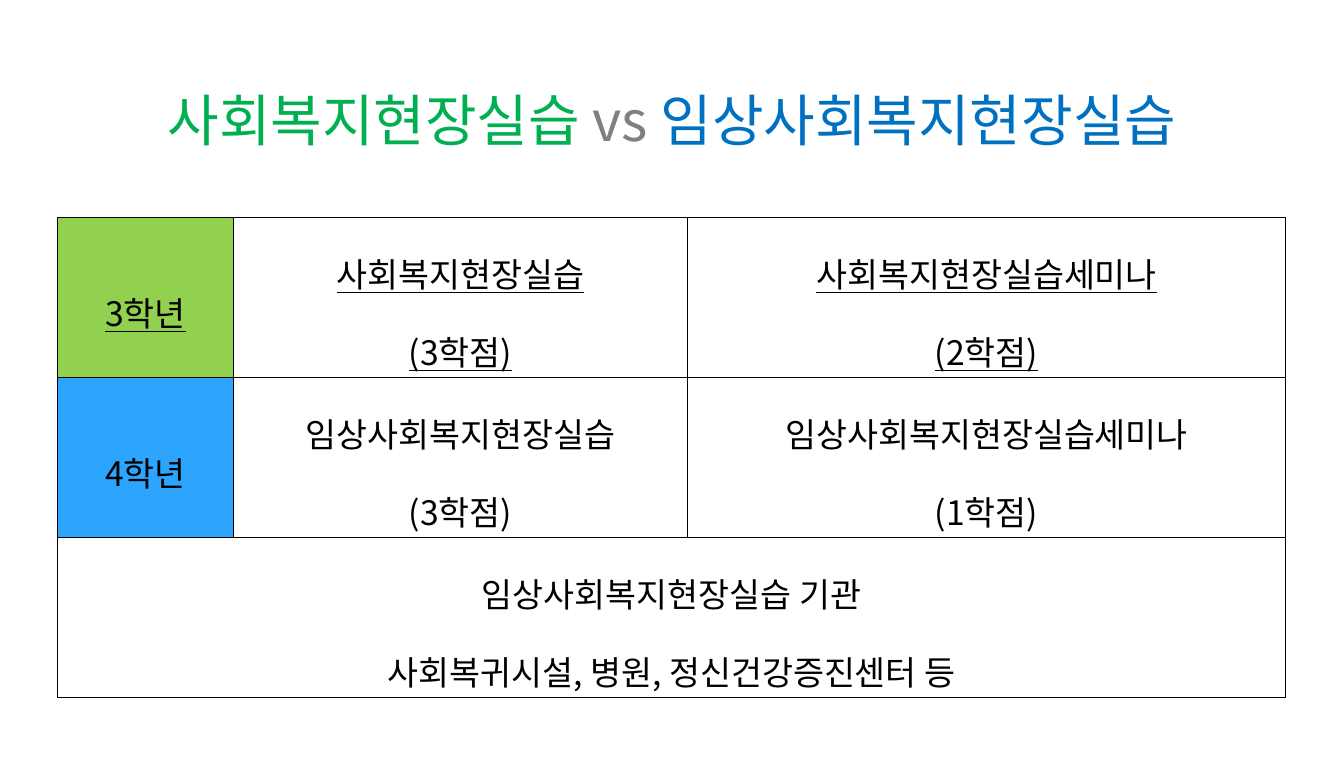
import pptx
import pptx.dml.color
import pptx.enum.text
import pptx.oxml
import pptx.oxml.ns
import pptx.util
from pptx.util import Inches

RGBColor = pptx.dml.color.RGBColor
BLACK = RGBColor(0x00, 0x00, 0x00)
GREEN = RGBColor(0x00, 0xB0, 0x50)
GRAY = RGBColor(0x80, 0x80, 0x80)
BLUE = RGBColor(0x00, 0x70, 0xC0)
LIGHT_GREEN = RGBColor(0x92, 0xD0, 0x50)
LIGHT_BLUE = RGBColor(0x2D, 0xA5, 0xFF)


class SlideBuilder:
    font_name = "Noto Sans CJK KR"
    title_size = 40
    body_size = 24
    line_spacing = 1.6
    border_width = pptx.util.Pt(0.28)

    def __init__(self, presentation):
        self.slide = presentation.slides.add_slide(presentation.slide_layouts[5])

    def add_run(self, paragraph, text, size, color, underline=False):
        run = paragraph.add_run()
        run.text = text
        run.font.size = pptx.util.Pt(size)
        run.font.color.rgb = color
        run.font.underline = underline
        run.font.name = self.font_name
        # Korean text takes the East Asian font
        east_asian = run.font._element.makeelement(
            pptx.oxml.ns.qn("a:ea"), {"typeface": self.font_name})
        run.font._element.append(east_asian)

    def add_title(self, left, top, width, height, parts):
        title = self.slide.shapes.title
        title.left, title.top = Inches(left), Inches(top)
        title.width, title.height = Inches(width), Inches(height)
        frame = title.text_frame
        frame.word_wrap = True
        frame.auto_size = pptx.enum.text.MSO_AUTO_SIZE.NONE
        frame.vertical_anchor = pptx.enum.text.MSO_ANCHOR.MIDDLE
        paragraph = frame.paragraphs[0]
        paragraph.alignment = pptx.enum.text.PP_ALIGN.CENTER
        for text, color in parts:
            self.add_run(paragraph, text, self.title_size, color)

    def add_table(self, left, top, column_widths, row_height, row_count):
        frame = self.slide.shapes.add_table(
            row_count, len(column_widths), Inches(left), Inches(top),
            Inches(sum(column_widths)), Inches(row_height * row_count))
        table = frame.table
        table.first_row = table.horz_banding = False
        for column, width in zip(table.columns, column_widths):
            column.width = Inches(width)
        for row in table.rows:
            row.height = Inches(row_height)
        for cell in table.iter_cells():
            cell.fill.background()
            self.add_borders(cell)
        return table

    def add_borders(self, cell):
        properties = cell._tc.get_or_add_tcPr()
        for index, side in enumerate(("lnL", "lnR", "lnT", "lnB")):
            properties.insert(index, pptx.oxml.parse_xml(
                f'<a:{side} {pptx.oxml.ns.nsdecls("a")} w="{self.border_width}">'
                f'<a:solidFill><a:srgbClr val="{BLACK}"/></a:solidFill></a:{side}>'))

    def fill_cell(self, cell, lines, underline=False, color=None):
        cell.margin_left = cell.margin_right = Inches(0.09)
        cell.margin_top = cell.margin_bottom = Inches(0.02)
        cell.vertical_anchor = pptx.enum.text.MSO_ANCHOR.MIDDLE
        if color is not None:
            cell.fill.solid()
            cell.fill.fore_color.rgb = color
        frame = cell.text_frame
        for index, line in enumerate(lines):
            paragraph = frame.add_paragraph() if index else frame.paragraphs[0]
            paragraph.alignment = pptx.enum.text.PP_ALIGN.CENTER
            paragraph.line_spacing = self.line_spacing
            self.add_run(paragraph, line, self.body_size, BLACK, underline)


def main():
    presentation = pptx.Presentation()
    presentation.slide_width = Inches(13.31)
    presentation.slide_height = Inches(7.5)
    builder = SlideBuilder(presentation)

    # Title
    builder.add_title(0.89, 0.79, 11.53, 0.77, [
        ("사회복지현장실습 ", GREEN),
        ("vs ", GRAY),
        ("임상사회복지현장실습", BLUE),
    ])

    # Courses by school year
    table = builder.add_table(0.57, 2.15, [1.74, 4.5, 5.92], 1.56, 3)
    school_years = [
        ("3학년", LIGHT_GREEN, True,
         ["사회복지현장실습", "(3학점)"], ["사회복지현장실습세미나", "(2학점)"]),
        ("4학년", LIGHT_BLUE, False,
         ["임상사회복지현장실습", "(3학점)"], ["임상사회복지현장실습세미나", "(1학점)"]),
    ]
    for row, (year, color, underline, *courses) in enumerate(school_years):
        builder.fill_cell(table.cell(row, 0), [year], underline, color)
        for column, course in enumerate(courses, start=1):
            builder.fill_cell(table.cell(row, column), course, underline)

    # Training institutions across the whole width
    institutions = table.cell(2, 0)
    institutions.merge(table.cell(2, 2))
    builder.fill_cell(institutions, [
        "임상사회복지현장실습 기관",
        "사회복귀시설, 병원, 정신건강증진센터 등",
    ])

    presentation.save("out.pptx")


if __name__ == "__main__":
    main()
